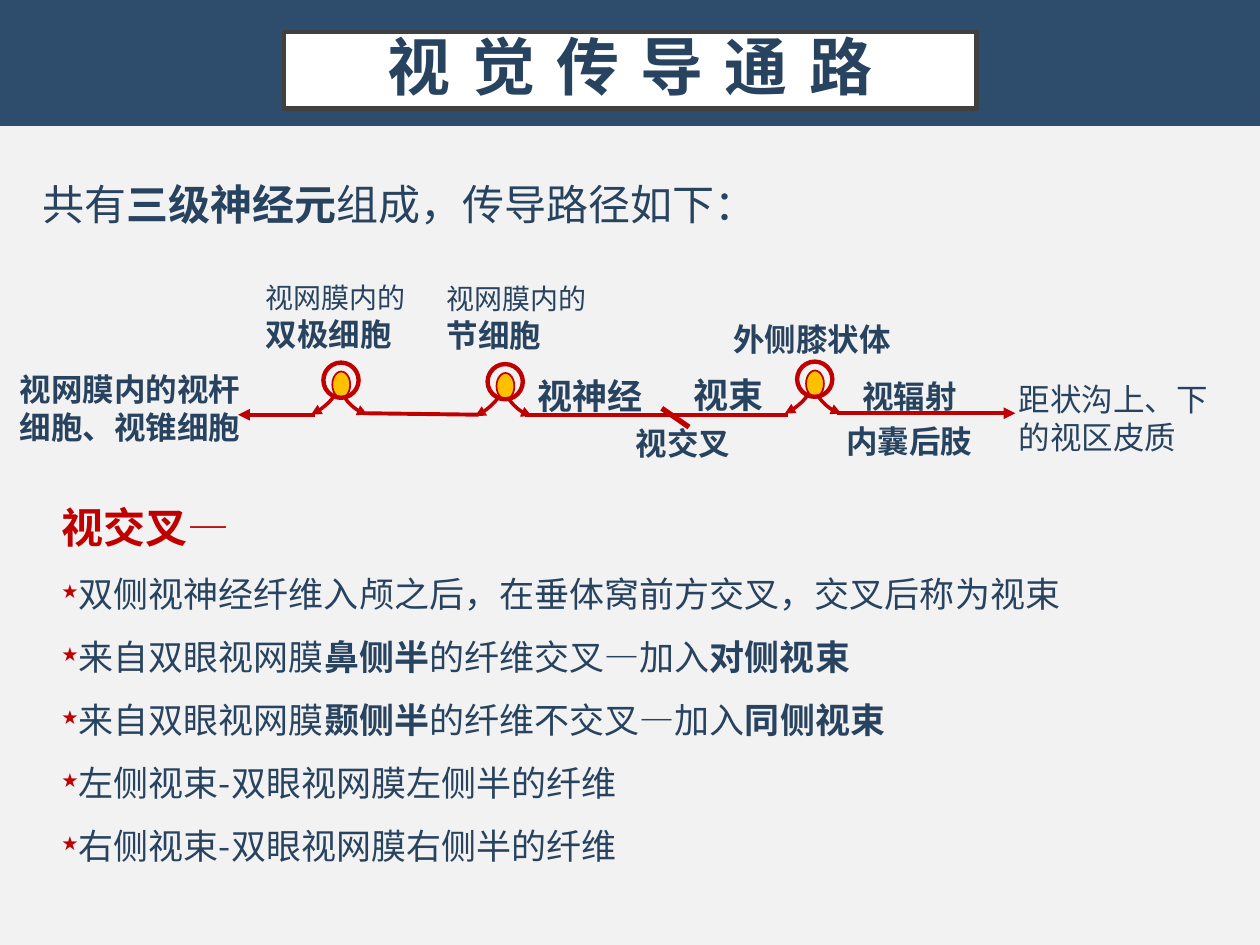
from dataclasses import dataclass

from lxml.etree import SubElement
from pptx import Presentation
from pptx.dml.color import RGBColor
from pptx.enum.shapes import MSO_CONNECTOR, MSO_SHAPE
from pptx.enum.text import MSO_ANCHOR, PP_ALIGN
from pptx.oxml.ns import qn
from pptx.util import Cm, Pt


@dataclass(frozen=True)
class Theme:
    font: str = "Noto Sans CJK SC"
    background: RGBColor = RGBColor(0xF2, 0xF2, 0xF2)
    band: RGBColor = RGBColor(0x2E, 0x4C, 0x6B)
    frame: RGBColor = RGBColor(0x40, 0x40, 0x40)
    white: RGBColor = RGBColor(0xFF, 0xFF, 0xFF)
    ink: RGBColor = RGBColor(0x28, 0x43, 0x5F)
    red: RGBColor = RGBColor(0xC0, 0x00, 0x00)
    gold: RGBColor = RGBColor(0xFF, 0xC0, 0x00)
    title: int = 36
    heading: int = 24
    body: int = 20
    label: int = 18
    small: int = 16


theme = Theme()


def write_text(shape, lines, size=theme.label, color=theme.ink, align=PP_ALIGN.LEFT,
               anchor=MSO_ANCHOR.TOP, spacing=1.0, tracking=None, inset=None):
    """Fill a shape with lines; ** switches bold, a leading ★ makes a bullet.

    A line is a text, or a tuple of text, size and colour.
    """
    frame = shape.text_frame
    frame.word_wrap = True
    frame.vertical_anchor = anchor
    if inset is not None:
        frame.margin_left = frame.margin_right = inset
        frame.margin_top = frame.margin_bottom = inset
    for index, line in enumerate(lines):
        text, line_size, line_color = (line, size, color) if isinstance(line, str) else line
        para = frame.add_paragraph() if index else frame.paragraphs[0]
        para.alignment = align
        para.line_spacing = spacing
        if text.startswith("★"):
            text = text[1:]
            properties = para._p.get_or_add_pPr()
            properties.set("marL", str(Cm(0.25)))
            properties.set("indent", str(-Cm(0.25)))
            bullet_color = SubElement(properties, qn("a:buClr"))
            SubElement(bullet_color, qn("a:srgbClr"), val=str(theme.red))
            SubElement(properties, qn("a:buSzPct"), val="55000")
            SubElement(properties, qn("a:buChar"), char="★")
        for part, words in enumerate(text.split("**")):
            if not words:
                continue
            span = para.add_run()
            span.text = words
            span.font.size = Pt(line_size)
            span.font.bold = part % 2 == 1
            span.font.color.rgb = line_color
            span.font.name = theme.font
            run_properties = span._r.get_or_add_rPr()
            SubElement(run_properties, qn("a:ea"), typeface=theme.font)
            if tracking:
                run_properties.set("spc", str(tracking * 100))


def style_line(shape, width, arrow=False):
    """Give a nerve fibre its red line, without shadow, and an optional end arrow."""
    shape.line.color.rgb = theme.red
    shape.line.width = Pt(width)
    if arrow:
        SubElement(shape.line._get_or_add_ln(), qn("a:tailEnd"), type="triangle")
    SubElement(shape._element.spPr, qn("a:effectLst"))


deck = Presentation()
deck.slide_width, deck.slide_height = Cm(25.4), Cm(19.05)
page = deck.slides.add_slide(deck.slide_layouts[6])
page.background.fill.solid()
page.background.fill.fore_color.rgb = theme.background
shapes = page.shapes

# Title band
band = shapes.add_shape(MSO_SHAPE.RECTANGLE, 0, 0, deck.slide_width, Cm(2.54))
band.shadow.inherit = False
band.fill.solid()
band.fill.fore_color.rgb = theme.band
band.line.fill.background()

title = shapes.add_shape(MSO_SHAPE.RECTANGLE, Cm(5.72), Cm(0.64), Cm(13.97), Cm(1.55))
title.shadow.inherit = False
title.fill.solid()
title.fill.fore_color.rgb = theme.white
title.line.color.rgb = theme.frame
title.line.width = Pt(2.5)
write_text(title, ["**视 觉 传 导 通 路**"], size=theme.title, align=PP_ALIGN.CENTER,
           anchor=MSO_ANCHOR.MIDDLE, spacing=0.9, tracking=2, inset=Cm(0.51))

# Nerve fibres: start, end, width, arrow at the end
fibres = [
    ((6.35, 8.36), (4.8, 8.36), 2.25, True),
    ((7.32, 8.33), (9.65, 8.36), 2.25, False),
    ((10.59, 8.36), (15.88, 8.36), 2.25, False),
    ((16.87, 8.33), (20.47, 8.33), 2.25, True),
    ((13.89, 8.61), (13.34, 8.23), 3, False),
]
for start, end, width, arrow in fibres:
    fibre = shapes.add_connector(MSO_CONNECTOR.STRAIGHT, *map(Cm, start + end))
    style_line(fibre, width, arrow)

# Neurons: two curved processes, a nucleus and a cell wall around each centre
processes = [
    [(-0.1, 0.25), (-0.2, 0.42), (-0.4, 0.6), (-0.61, 0.69)],
    [(0.03, 0.28), (0.14, 0.48), (0.34, 0.64), (0.53, 0.69)],
]
steps = 12
for center_x, center_y in [(6.88, 7.67), (10.19, 7.7), (16.43, 7.65)]:
    for controls in processes:
        points = []
        for step in range(steps + 1):
            t = step / steps
            weights = [(1 - t) ** 3, 3 * t * (1 - t) ** 2, 3 * t ** 2 * (1 - t), t ** 3]
            x = center_x + sum(w * c[0] for w, c in zip(weights, controls))
            y = center_y + sum(w * c[1] for w, c in zip(weights, controls))
            points.append((Cm(x), Cm(y)))
        builder = shapes.build_freeform(*points[0])
        builder.add_line_segments(points[1:], close=False)
        process = builder.convert_to_shape()
        process.fill.background()
        style_line(process, 2, arrow=True)

    nucleus = shapes.add_shape(MSO_SHAPE.OVAL, Cm(center_x - 0.18), Cm(center_y - 0.18),
                               Cm(0.36), Cm(0.53))
    nucleus.fill.solid()
    nucleus.fill.fore_color.rgb = theme.gold
    style_line(nucleus, 1)
    wall = shapes.add_shape(MSO_SHAPE.OVAL, Cm(center_x - 0.36), Cm(center_y - 0.36),
                            Cm(0.71), Cm(0.71))
    wall.fill.background()
    style_line(wall, 2.5)

# Text: left, top, width, height, lines, format
middle = {"anchor": MSO_ANCHOR.MIDDLE}
retina = ("视网膜内的", theme.small, theme.ink)
texts = [
    (0.61, 2.97, 17.93, 1.8, ["共有**三级神经元**组成，传导路径如下："],
     {"size": theme.heading, "spacing": 1.5}),
    (20.29, 7.54, 4.95, 1.8, ["距状沟上、下", "的视区皮质"], {}),
    (0.15, 7.34, 5.21, 1.8, ["**视网膜内的视杆细胞、视锥细胞**"], {}),
    (5.11, 5.54, 3.99, 1.7, [retina, "**双极细胞**"], {}),
    (8.76, 5.56, 3.99, 1.7, [retina, "**节细胞**"], {}),
    (14.53, 6.32, 4.14, 1.02, ["**外侧膝状体**"], {}),
    (16.61, 7.32, 3.45, 2.11, ["**视辐射**", "**内囊后肢**"],
     {"align": PP_ALIGN.CENTER, "spacing": 1.2}),
    (10.59, 7.42, 3.1, 1.12, ["**视神经**"], {"size": theme.body, **middle}),
    (13.74, 7.39, 2.44, 1.12, ["**视束**"], {"size": theme.body, **middle}),
    (12.57, 8.41, 2.82, 1.02, ["**视交叉**"], middle),
    (0.99, 9.47, 21.74, 8.31, [
        ("**视交叉**—", theme.heading, theme.red),
        "★双侧视神经纤维入颅之后，在垂体窝前方交叉，交叉后称为视束",
        "★来自双眼视网膜**鼻侧半**的纤维交叉—加入**对侧视束**",
        "★来自双眼视网膜**颞侧半**的纤维不交叉—加入**同侧视束**",
        "★左侧视束-双眼视网膜左侧半的纤维",
        "★右侧视束-双眼视网膜右侧半的纤维",
    ], {"size": theme.body, "spacing": 1.5}),
]
for left, top, width, height, lines, text_format in texts:
    box = shapes.add_textbox(Cm(left), Cm(top), Cm(width), Cm(height))
    write_text(box, lines, **text_format)

deck.save("out.pptx")
